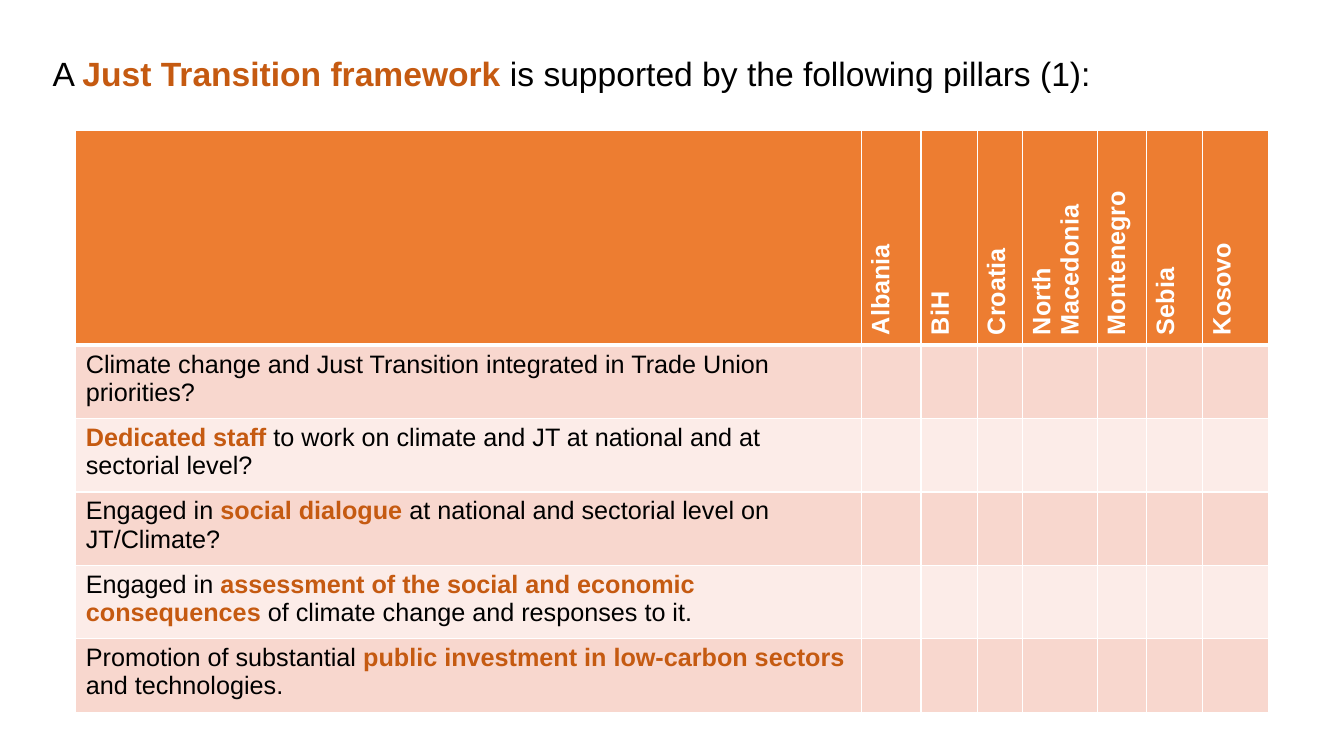
"""Build the slide on the pillars of a Just Transition framework."""
from dataclasses import dataclass

from lxml.etree import SubElement
from pptx import Presentation
from pptx.dml.color import RGBColor
from pptx.enum.text import MSO_ANCHOR as Anchor, MSO_AUTO_SIZE as Fit, PP_ALIGN as Align
from pptx.oxml.ns import qn
from pptx.util import Cm, Pt

BLACK = RGBColor(0x00, 0x00, 0x00)
WHITE = RGBColor(0xFF, 0xFF, 0xFF)
ORANGE = RGBColor(0xED, 0x7D, 0x31)
RUST = RGBColor(0xC5, 0x5A, 0x11)
PEACH = RGBColor(0xF8, 0xD7, 0xCE)
BLUSH = RGBColor(0xFC, 0xEC, 0xE8)
FONT = "Arial"


@dataclass(frozen=True)
class Part:
    text: str
    color: RGBColor = BLACK
    bold: bool = False


@dataclass(frozen=True)
class Land:
    name: str
    width: float


def key(text: str) -> Part:
    return Part(text, RUST, True)


TITLE = [
    Part("A "),
    key("Just Transition framework"),
    Part(" is supported by the following pillars (1):"),
]
LANDS = [
    Land("Albania", 1.5),
    Land("BiH", 1.42),
    Land("Croatia", 1.14),
    Land("North Macedonia", 1.88),
    Land("Montenegro", 1.24),
    Land("Sebia", 1.42),
    Land("Kosovo", 1.65),
]
PILLARS = [
    [Part("Climate change and Just Transition integrated in Trade Union priorities?")],
    [
        key("Dedicated staff "),
        Part("to work on climate and JT at national and at sectorial level?"),
    ],
    [
        Part("Engaged in "),
        key("social dialogue "),
        Part("at national and sectorial level on JT/Climate?"),
    ],
    [
        Part("Engaged in "),
        key("assessment of the social and economic consequences "),
        Part("of climate change and responses to it."),
    ],
    [
        Part("Promotion of substantial "),
        key("public investment in low-carbon sectors "),
        Part("and technologies."),
    ],
]
WIDTHS = [19.8] + [land.width for land in LANDS]
HEAD, ROW = 4.17, 1.85


def write(frame, parts: list[Part], size: float) -> None:
    para = frame.paragraphs[0]
    para.alignment = Align.LEFT
    for part in parts:
        run = para.add_run()
        run.text = part.text
        font = run.font
        font.name, font.size, font.bold = FONT, Pt(size), part.bold
        font.color.rgb = part.color


def edge(cell, side: str, width: float) -> None:
    props = cell._tc.get_or_add_tcPr()
    line = SubElement(props, qn(f"a:ln{side}"), w=str(Pt(width)))
    fill = SubElement(line, qn("a:solidFill"))
    SubElement(fill, qn("a:srgbClr"), val=str(WHITE))


def paint(cell, color: RGBColor, top: float, base: float) -> None:
    for side, width in zip("LRTB", (1, 1, top, base)):
        edge(cell, side, width)
    cell.fill.solid()
    cell.fill.fore_color.rgb = color


def add_title(slide) -> None:
    title = slide.shapes.title
    title.left, title.top = Cm(1.07), Cm(1.2)
    title.width, title.height = Cm(32.05), Cm(1.62)
    frame = title.text_frame
    frame.word_wrap = True
    frame.auto_size = Fit.NONE
    frame.vertical_anchor = Anchor.TOP
    write(frame, TITLE, 24)


def add_grid(slide) -> None:
    rows = 1 + len(PILLARS)
    grid = slide.shapes.add_table(
        rows, len(WIDTHS), Cm(1.91), Cm(3.29),
        Cm(sum(WIDTHS)), Cm(HEAD + ROW * len(PILLARS)),
    ).table
    for col, width in zip(grid.columns, WIDTHS):
        col.width = Cm(width)
    for num, row in enumerate(grid.rows):
        row.height = Cm(ROW if num else HEAD)
        color = (PEACH if num % 2 else BLUSH) if num else ORANGE
        for cell in row.cells:
            paint(cell, color, 3 if num == 1 else 1, 1 if num else 3)
    for col, land in enumerate(LANDS, 1):
        cell = grid.cell(0, col)
        cell._tc.get_or_add_tcPr().set("vert", "vert270")
        write(cell.text_frame, [Part(land.name, WHITE, True)], 18)
    for num, parts in enumerate(PILLARS, 1):
        write(grid.cell(num, 0).text_frame, parts, 18)


def main() -> None:
    deck = Presentation()
    deck.slide_width, deck.slide_height = Cm(33.87), Cm(19.05)
    slide = deck.slides.add_slide(deck.slide_layouts[5])
    add_grid(slide)
    add_title(slide)
    deck.save("out.pptx")


if __name__ == "__main__":
    main()
